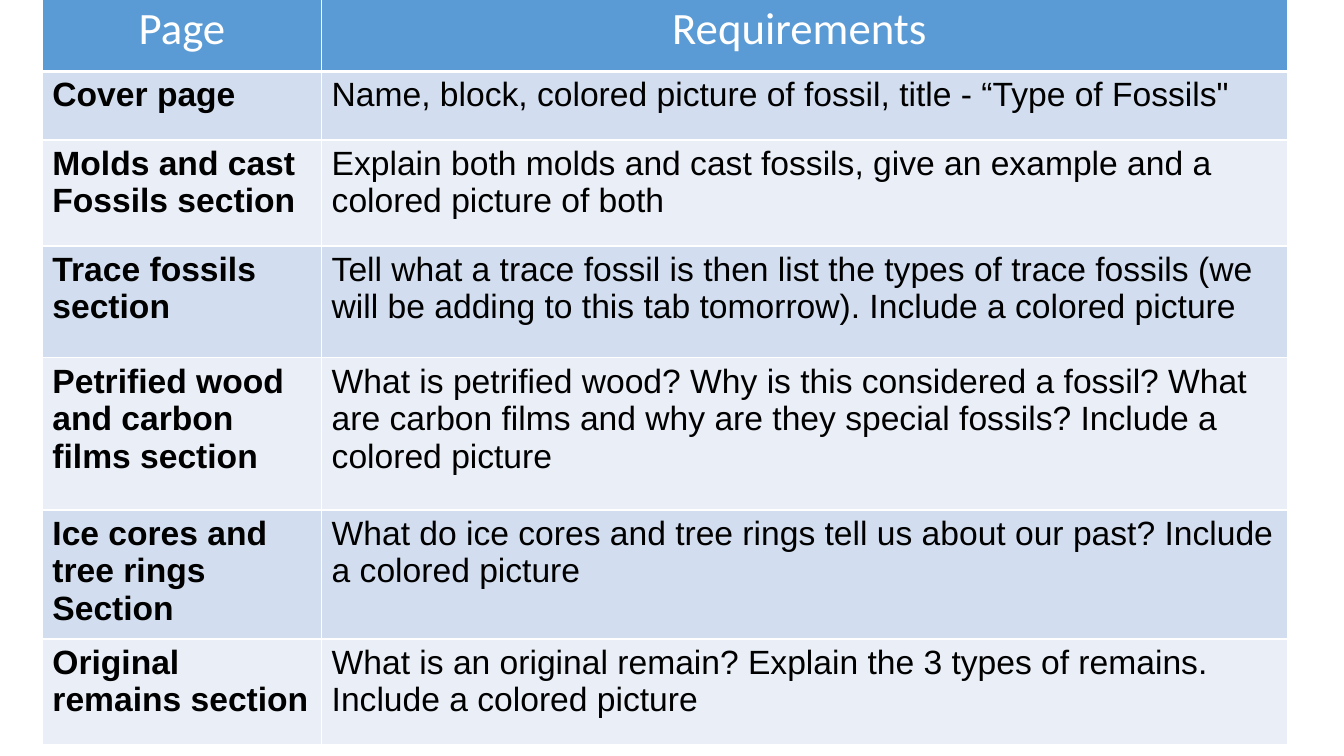
from typing import NamedTuple

from lxml.etree import SubElement
from pptx import Presentation
from pptx.dml.color import RGBColor
from pptx.enum.text import PP_ALIGN
from pptx.oxml import parse_xml
from pptx.oxml.ns import nsdecls, qn
from pptx.table import _Cell
from pptx.util import Inches, Pt

WHITE = RGBColor(0xFF, 0xFF, 0xFF)
BLACK = RGBColor(0x00, 0x00, 0x00)
HEADER_BLUE = RGBColor(0x5B, 0x9B, 0xD5)
BAND_FILLS = (RGBColor(0xEA, 0xEF, 0xF7), RGBColor(0xD2, 0xDE, 0xEF))


class Section(NamedTuple):
    page: str
    requirements: str
    height: float


HEADER = Section("Page", "Requirements ", 0.74)
SECTIONS = [
    Section("Cover page",
            "Name, block, colored picture of fossil, title - “Type of Fossils\"", 0.68),
    Section("Molds and cast Fossils section",
            "Explain both molds and cast fossils, give an example and a colored picture of both",
            1.05),
    Section("Trace fossils section",
            "Tell what a trace fossil is then list the types of trace fossils "
            "(we will be adding to this tab tomorrow). Include a colored picture", 1.11),
    Section("Petrified wood and carbon films section",
            "What is petrified wood? Why is this considered a fossil? What are carbon films "
            "and why are they special fossils? Include a colored picture", 1.51),
    Section("Ice cores and tree rings Section",
            "What do ice cores and tree rings tell us about our past? Include a colored picture",
            1.28),
    Section("Original remains section",
            "What is an original remain? Explain the 3 types of remains. "
            "Include a colored picture", 1.05),
]
COLUMN_WIDTHS = (2.77, 9.58)


def set_borders(cell: _Cell, bottom: float = 1) -> None:
    """Draw white borders of one point, with a chosen width at the bottom."""
    properties = cell._tc.get_or_add_tcPr()
    widths = {"lnL": 1, "lnR": 1, "lnT": 1, "lnB": bottom}
    for position, (side, width) in enumerate(widths.items()):
        line = parse_xml(f'<a:{side} {nsdecls("a")} w="{Pt(width)}"/>')
        fill = SubElement(line, qn("a:solidFill"))
        SubElement(fill, qn("a:srgbClr"), val=str(WHITE))
        properties.insert(position, line)


def write_cell(cell: _Cell, text: str, *, fill: RGBColor, font: str = "Arial",
               size: float = 24, color: RGBColor = BLACK, bold: bool = False,
               alignment: PP_ALIGN = PP_ALIGN.LEFT, bottom: float = 1) -> None:
    cell.fill.solid()
    cell.fill.fore_color.rgb = fill
    set_borders(cell, bottom)
    paragraph = cell.text_frame.paragraphs[0]
    paragraph.alignment = alignment
    run = paragraph.add_run()
    run.text = text
    run.font.name = font
    run.font.size = Pt(size)
    run.font.bold = bold
    run.font.color.rgb = color


def main() -> None:
    presentation = Presentation()
    presentation.slide_width = Inches(13.33)
    presentation.slide_height = Inches(7.5)
    slide = presentation.slides.add_slide(presentation.slide_layouts[6])

    rows = [HEADER, *SECTIONS]
    table = slide.shapes.add_table(
        len(rows), len(COLUMN_WIDTHS), Inches(0.42), Inches(-0.03),
        Inches(sum(COLUMN_WIDTHS)), Inches(sum(row.height for row in rows))).table
    for column, width in zip(table.columns, COLUMN_WIDTHS):
        column.width = Inches(width)
    for table_row, section in zip(table.rows, rows):
        table_row.height = Inches(section.height)

    for column, text in enumerate((HEADER.page, HEADER.requirements)):
        write_cell(table.cell(0, column), text, fill=HEADER_BLUE, font="Calibri", size=32,
                   color=WHITE, alignment=PP_ALIGN.CENTER, bottom=3)
    for row, section in enumerate(SECTIONS, start=1):
        fill = BAND_FILLS[row % 2]
        write_cell(table.cell(row, 0), section.page, fill=fill, bold=True)
        write_cell(table.cell(row, 1), section.requirements, fill=fill)

    presentation.save("out.pptx")


if __name__ == "__main__":
    main()
